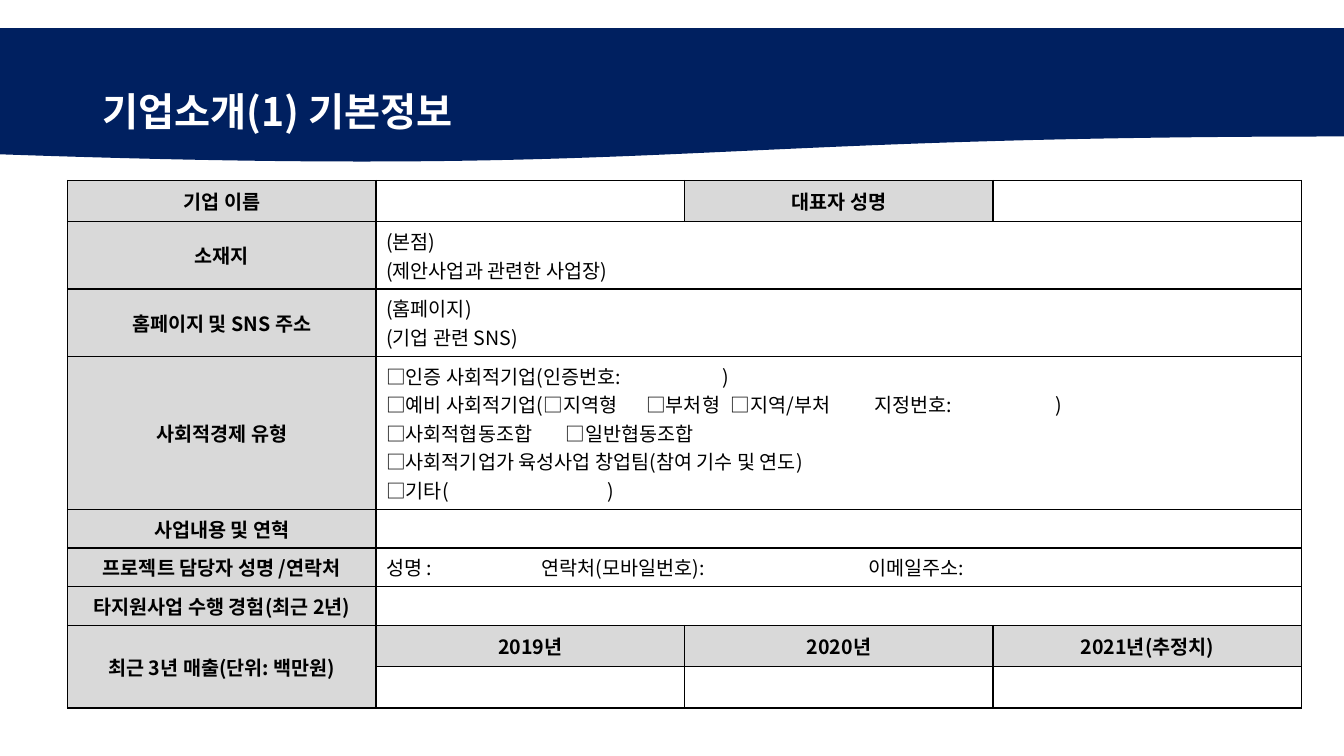
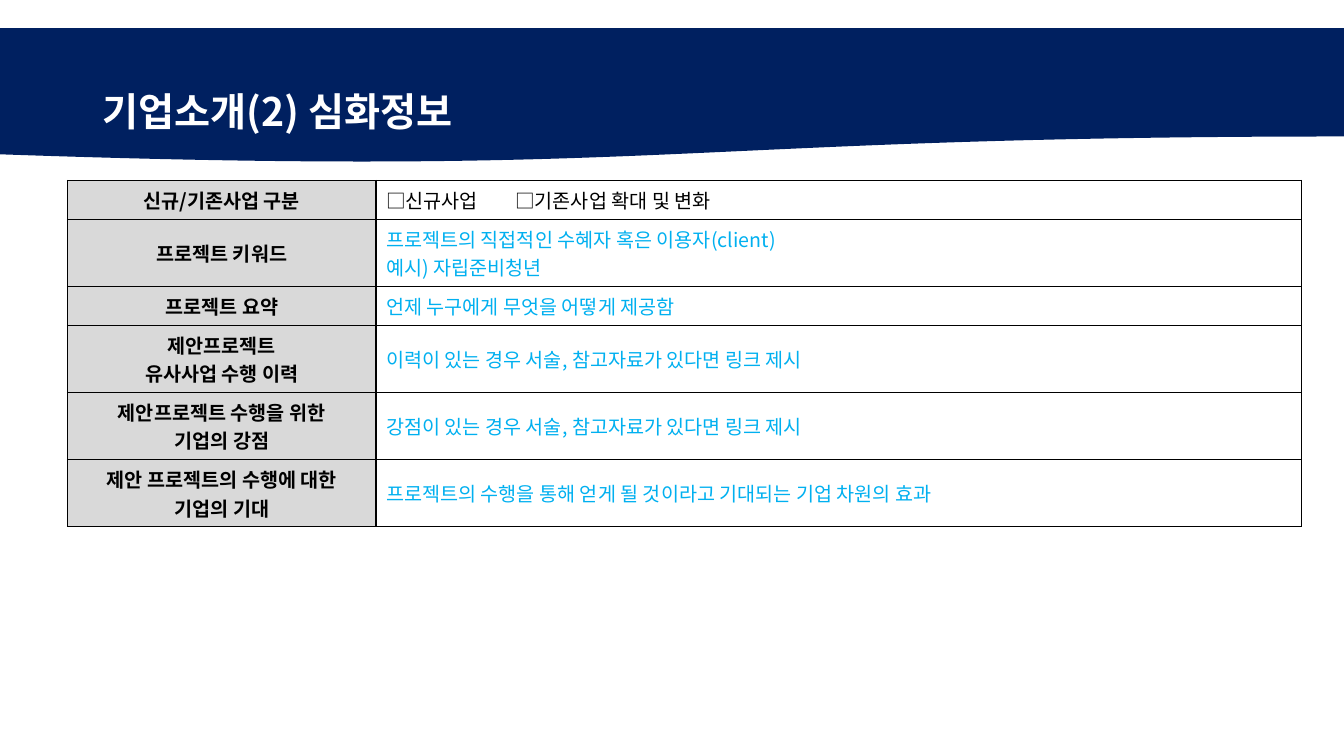
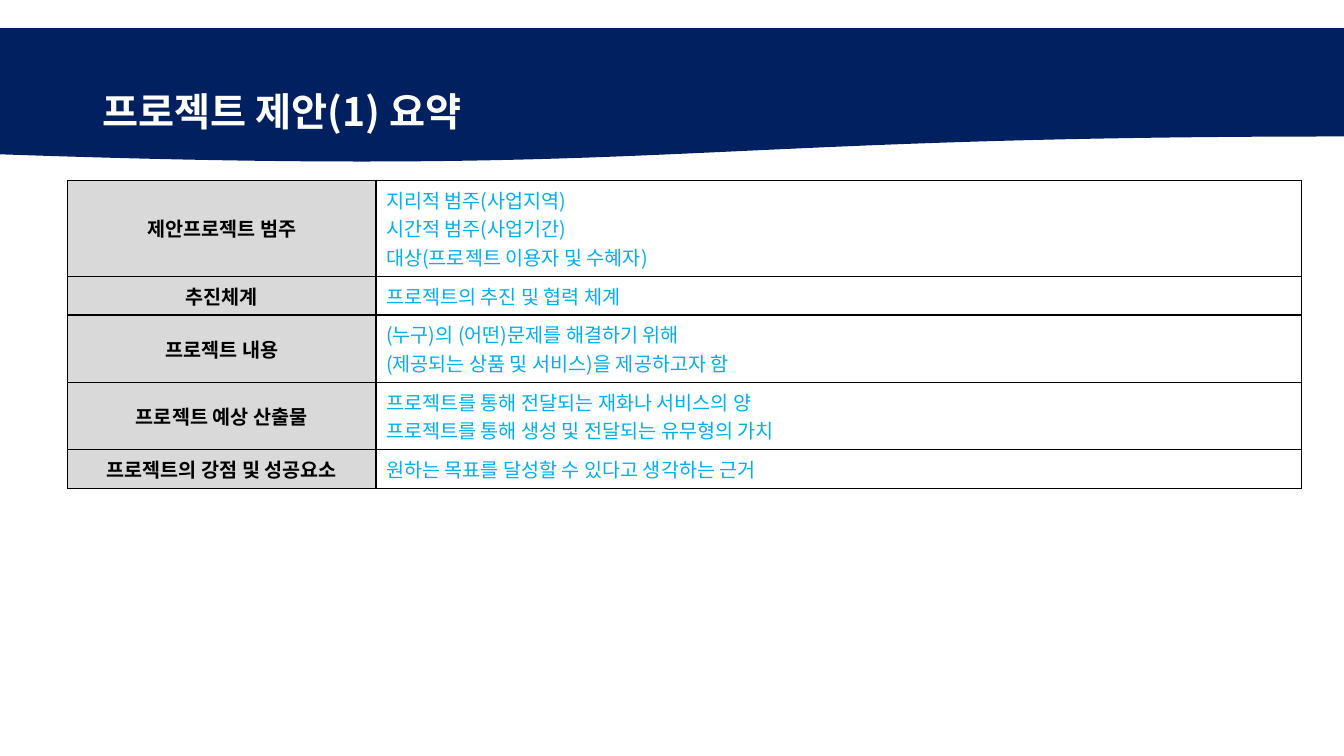
from dataclasses import dataclass

from lxml import etree
from pptx import Presentation
from pptx.dml.color import RGBColor
from pptx.enum import shapes, text
from pptx.oxml import ns
from pptx.util import Inches, Pt

NAVY = RGBColor(0x00, 0x20, 0x60)
GRAY = RGBColor(0xD9, 0xD9, 0xD9)
SKY = RGBColor(0x00, 0xB0, 0xF0)
BLACK = RGBColor(0x00, 0x00, 0x00)
WHITE = RGBColor(0xFF, 0xFF, 0xFF)
FONT = "Noto Sans CJK KR"
WIDE, TALL = 13.33, 7.5
LEFT, TOP, UNIT = 0.67, 1.79, 3.06


@dataclass
class Line:
    """One paragraph; "_" is an underlined tab, stops are in inches."""
    words: str
    stops: tuple[float, ...] = ()


@dataclass
class Cell:
    lines: tuple[Line, ...] = ()
    head: bool = False
    color: RGBColor = BLACK
    cols: int = 1
    rows: int = 1


@dataclass
class Row:
    height: float
    cells: list[Cell | None]


@dataclass
class Page:
    title: str
    height: float
    cols: tuple[float, ...]
    rows: list[Row]


def head(*words: str, rows: int = 1) -> Cell:
    return Cell(tuple(Line(w) for w in words), head=True, rows=rows)


def hint(*words: str) -> Cell:
    return Cell(tuple(Line(w) for w in words), color=SKY)


def full(*lines: Line) -> Cell:
    return Cell(lines, cols=3)


def sub(parent, tag: str, **attrs: str):
    return etree.SubElement(parent, ns.qn(tag), **attrs)


def put(par, words: str, *, size: float = 14, bold: bool = False,
        color: RGBColor = BLACK, line: bool = False) -> None:
    """Add a formatted run to a paragraph."""
    run = par.add_run()
    run.text = words
    font = run.font
    font.name, font.size, font.bold = FONT, Pt(size), bold
    font.underline = line
    font.color.rgb = color
    sub(font._element, "a:ea", typeface=FONT)


def set_tabs(par, stops: tuple[float, ...]) -> None:
    tabs = sub(par._p.get_or_add_pPr(), "a:tabLst")
    for stop in stops:
        sub(tabs, "a:tab", pos=str(Inches(stop)), algn="l")


def frame(box) -> None:
    """Draw the four borders of a table cell."""
    props = box._tc.get_or_add_tcPr()
    for side in ("a:lnL", "a:lnR", "a:lnT", "a:lnB"):
        fill = sub(sub(props, side, w=str(Pt(1))), "a:solidFill")
        sub(fill, "a:srgbClr", val=str(BLACK))


def fill_cell(box, cell: Cell) -> None:
    box.vertical_anchor = text.MSO_ANCHOR.MIDDLE
    if cell.head:
        box.fill.solid()
        box.fill.fore_color.rgb = GRAY
    else:
        box.fill.background()
    body = box.text_frame
    if not cell.lines:
        sub(body.paragraphs[0]._p, "a:endParaRPr", sz="1400")
    for num, line in enumerate(cell.lines):
        par = body.add_paragraph() if num else body.paragraphs[0]
        par.alignment = text.PP_ALIGN.CENTER if cell.head else text.PP_ALIGN.LEFT
        if line.stops:
            set_tabs(par, line.stops)
        for pos, part in enumerate(line.words.split("_")):
            if pos:
                put(par, "\t", line=True)
            if part:
                put(par, part, bold=cell.head, color=cell.color)


def add_grid(slide, page: Page) -> None:
    shape = slide.shapes.add_table(
        len(page.rows), len(page.cols), Inches(LEFT), Inches(TOP),
        Inches(sum(page.cols)), Inches(page.height))
    grid = shape.table
    grid.first_row = grid.horz_banding = False
    for col, width in zip(grid.columns, page.cols):
        col.width = Inches(width)
    for box in grid.iter_cells():
        frame(box)
        box.fill.background()
    for y, row in enumerate(page.rows):
        grid.rows[y].height = Inches(row.height)
        x = 0
        for cell in row.cells:
            if cell is None:
                x += 1
                continue
            box = grid.cell(y, x)
            if cell.cols * cell.rows > 1:
                box.merge(grid.cell(y + cell.rows - 1, x + cell.cols - 1))
            fill_cell(box, cell)
            x += cell.cols
    shape.height = Inches(page.height)


def add_title(slide, words: str) -> None:
    """Place the title over the wavy band."""
    title = slide.shapes.title
    title.left, title.top = Inches(0.92), Inches(0.4)
    title.width, title.height = Inches(11.5), Inches(1.45)
    body = title.text_frame
    body.word_wrap = True
    body.auto_size = text.MSO_AUTO_SIZE.NONE
    body.vertical_anchor = text.MSO_ANCHOR.MIDDLE
    par = body.paragraphs[0]
    par.alignment = text.PP_ALIGN.LEFT
    par.line_spacing = 0.9
    put(par, words, size=28, bold=True, color=WHITE)

    band = slide.shapes.add_shape(
        shapes.MSO_SHAPE.FLOWCHART_DOCUMENT,
        Inches(0), Inches(0.28), Inches(WIDE), Inches(1.34))
    band.shadow.inherit = False
    band.fill.solid()
    band.fill.fore_color.rgb = NAVY
    band.line.fill.background()
    title.element.addprevious(band.element)


# Content
BASIC = Page("기업소개(1) 기본정보", 4.62, (UNIT,) * 4, [
    Row(0.41, [head("기업 이름"), Cell(), head("대표자 성명"), Cell()]),
    Row(0.28, [head("소재지"),
               full(Line("(본점)"), Line("(제안사업과 관련한 사업장)"))]),
    Row(0.28, [head("홈페이지 및 SNS 주소"),
               full(Line("(홈페이지)"), Line("(기업 관련 SNS)"))]),
    Row(0.41, [head("사회적경제 유형"), full(
        Line("□인증 사회적기업(인증번호:_)", (3.34,)),
        Line("□예비 사회적기업(□지역형\t□부처형\t□지역/부처\t지정번호: _ )",
             (2.58, 3.42, 4.84, 6.6)),
        Line("□사회적협동조합\t□일반협동조합", (1.78,)),
        Line("□사회적기업가 육성사업 창업팀(참여 기수 및 연도)"),
        Line("□기타(_)", (2.2,)))]),
    Row(0.17, [head("사업내용 및 연혁"), full()]),
    Row(0.17, [head("프로젝트 담당자 성명 /연락처"), full(
        Line("성명 : _\t연락처(모바일번호):\t이메일주소: _",
             (1.31, 1.54, 4.78, 7.41)))]),
    Row(0.2, [head("타지원사업 수행 경험(최근 2년)"), full()]),
    Row(0.41, [head("최근 3년 매출(단위: 백만원)", rows=2),
               head("2019년"), head("2020년"), head("2021년(추정치)")]),
    Row(0.41, [None, Cell(), Cell(), Cell()]),
])

DETAIL = Page("기업소개(2) 심화정보", 2.93, (UNIT, 3 * UNIT), [
    Row(0.2, [head("신규/기존사업 구분"),
              Cell((Line("□신규사업\t□기존사업 확대 및 변화", (1.28,)),))]),
    Row(0.17, [head("프로젝트 키워드"),
               hint("프로젝트의 직접적인 수혜자 혹은 이용자(client)",
                    "예시) 자립준비청년")]),
    Row(0.17, [head("프로젝트 요약"),
               hint("언제 누구에게 무엇을 어떻게 제공함")]),
    Row(0.28, [head("제안프로젝트", "유사사업 수행 이력"),
               hint("이력이 있는 경우 서술, 참고자료가 있다면 링크 제시")]),
    Row(0.28, [head("제안프로젝트 수행을 위한", "기업의 강점"),
               hint("강점이 있는 경우 서술, 참고자료가 있다면 링크 제시")]),
    Row(0.28, [head("제안 프로젝트의 수행에 대한", "기업의 기대"),
               hint("프로젝트의 수행을 통해 얻게 될 것이라고 기대되는 기업 차원의 효과")]),
])

PLAN = Page("프로젝트 제안(1) 요약", 2.6, (UNIT, 3 * UNIT), [
    Row(0.41, [head("제안프로젝트 범주"),
               hint("지리적 범주(사업지역)", "시간적 범주(사업기간)",
                    "대상(프로젝트 이용자 및 수혜자)")]),
    Row(0.28, [head("추진체계"), hint("프로젝트의 추진 및 협력 체계")]),
    Row(0.28, [head("프로젝트 내용"),
               hint("(누구)의 (어떤)문제를 해결하기 위해",
                    "(제공되는 상품 및 서비스)을 제공하고자 함")]),
    Row(0.28, [head("프로젝트 예상 산출물"),
               hint("프로젝트를 통해 전달되는 재화나 서비스의 양",
                    "프로젝트를 통해 생성 및 전달되는 유무형의 가치")]),
    Row(0.28, [head("프로젝트의 강점 및 성공요소"),
               hint("원하는 목표를 달성할 수 있다고 생각하는 근거")]),
])


def main() -> None:
    deck = Presentation()
    deck.slide_width, deck.slide_height = Inches(WIDE), Inches(TALL)
    layout = deck.slide_layouts.get_by_name("Title Only")
    for page in (BASIC, DETAIL, PLAN):
        slide = deck.slides.add_slide(layout)
        add_title(slide, page.title)
        add_grid(slide, page)
    deck.save("out.pptx")


if __name__ == "__main__":
    main()
